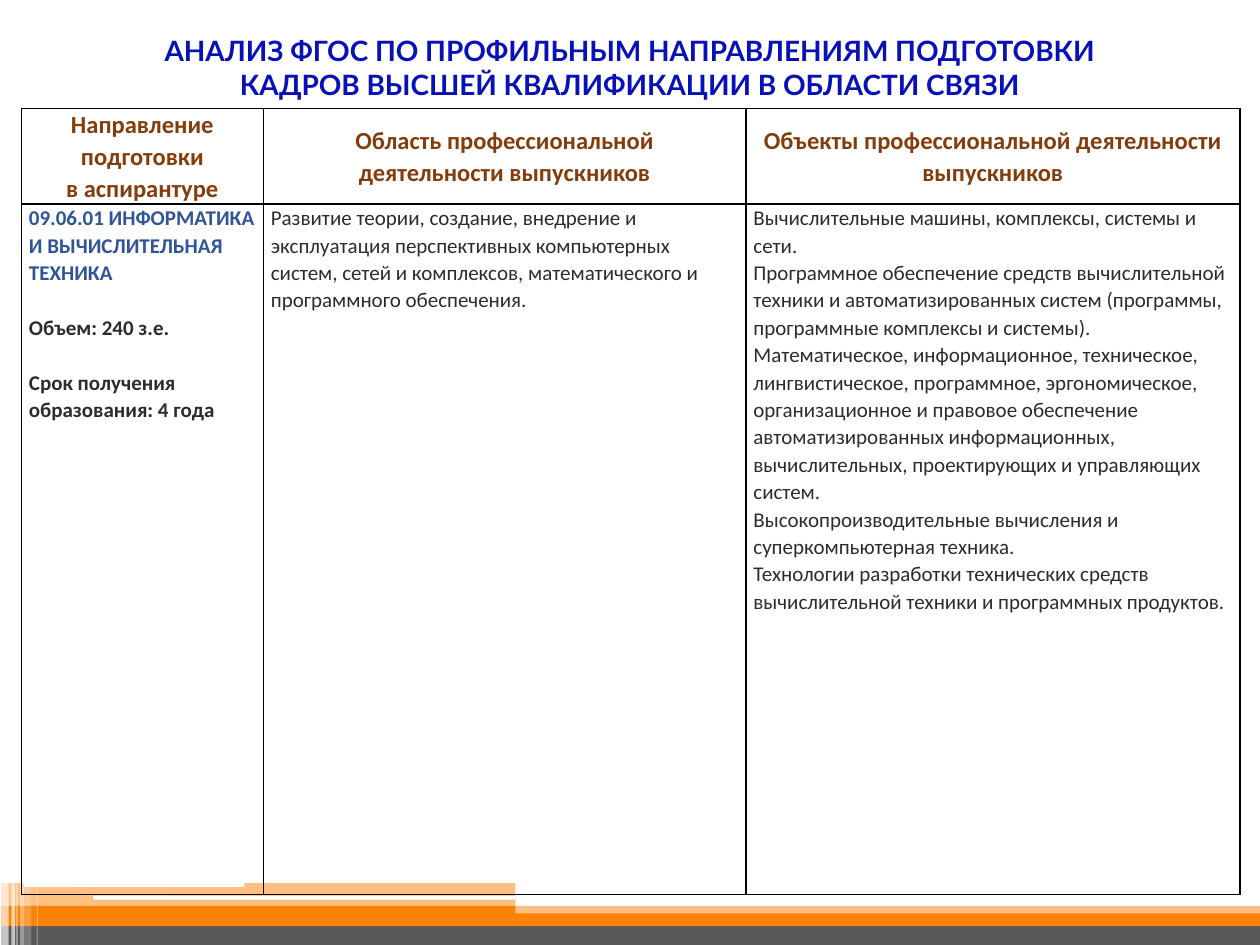
from dataclasses import dataclass

import pptx
import pptx.dml.color
import pptx.enum.shapes
import pptx.enum.text
import pptx.oxml
import pptx.oxml.ns
import pptx.util
from pptx.dml.color import RGBColor
from pptx.util import Inches, Pt

ORANGE = RGBColor(0xFB, 0x82, 0x09)
GRAY = RGBColor(0x58, 0x58, 0x58)
WHITE = RGBColor(0xFF, 0xFF, 0xFF)
BLACK = RGBColor(0, 0, 0)
TITLE_BLUE = RGBColor(0x08, 0x10, 0xB8)
BROWN = RGBColor(0x83, 0x3C, 0x0B)
BLUE = RGBColor(0x2F, 0x55, 0x97)
DARK = RGBColor(0x2C, 0x2C, 0x2C)

CENTER = pptx.enum.text.PP_ALIGN.CENTER
LEFT = pptx.enum.text.PP_ALIGN.LEFT
MIDDLE = pptx.enum.text.MSO_ANCHOR.MIDDLE
TOP = pptx.enum.text.MSO_ANCHOR.TOP


@dataclass
class Bar:
    left: float
    top: float
    width: float
    height: float
    color: RGBColor
    opacity: int = 100
    rounded: bool = False


@dataclass
class Para:
    text: str
    color: RGBColor = DARK
    size: int = 12
    bold: bool = False
    gap: float = 0


BARS = [
    Bar(0.01, 7.19, 10, 0.09, ORANGE, 50),
    Bar(0.01, 7.31, 10, 0.19, GRAY),
    Bar(0.01, 7.25, 10, 0.1, ORANGE),
    Bar(0.01, 7.19, 4.08, 0.1, ORANGE),
    Bar(0.01, 7.01, 4.08, 0.2, ORANGE, 50),
    Bar(0.74, 7.11, 3.35, 0.03, WHITE, rounded=True),
    Bar(0.19, 7, 1.75, 0.04, WHITE, rounded=True),
    # Fading stripes at the left edge
    Bar(0.01, 6.82, 0.06, 0.68, WHITE, 65),
    Bar(0.09, 6.82, 0.03, 0.68, WHITE, 65),
    Bar(0.13, 6.82, 0.01, 0.68, WHITE, 60),
    Bar(0.16, 6.82, 0.03, 0.68, WHITE, 40),
    Bar(0.19, 6.86, 0.06, 0.64, WHITE, 20),
    Bar(0.29, 6.86, 0.01, 0.64, WHITE, 30),
]

TITLE = ("АНАЛИЗ ФГОС ПО ПРОФИЛЬНЫМ НАПРАВЛЕНИЯМ ПОДГОТОВКИ\v"
         "КАДРОВ ВЫСШЕЙ КВАЛИФИКАЦИИ В ОБЛАСТИ СВЯЗИ")
HEADERS = [
    "Направление подготовки\vв аспирантуре",
    "Область профессиональной\vдеятельности выпускников",
    "Объекты профессиональной деятельности выпускников",
]
LINE_GAP = 15.7
BODY = [
    [
        Para("09.06.01 ИНФОРМАТИКА И ВЫЧИСЛИТЕЛЬНАЯ ТЕХНИКА", BLUE, bold=True),
        Para("Объем: 240 з.е.", bold=True, gap=LINE_GAP),
        Para("Срок получения образования: 4 года", bold=True, gap=LINE_GAP),
    ],
    [
        Para("Развитие теории, создание, внедрение и эксплуатация перспективных "
             "компьютерных систем, сетей и комплексов, математического и "
             "программного обеспечения."),
    ],
    [
        Para("Вычислительные машины, комплексы, системы и сети."),
        Para("Программное обеспечение средств вычислительной техники и "
             "автоматизированных систем (программы, программные комплексы и "
             "системы)."),
        Para("Математическое, информационное, техническое, лингвистическое, "
             "программное, эргономическое, организационное и правовое обеспечение "
             "автоматизированных информационных, вычислительных, проектирующих и "
             "управляющих систем."),
        Para("Высокопроизводительные вычисления и суперкомпьютерная техника."),
        Para("Технологии разработки технических средств вычислительной техники и "
             "программных продуктов."),
    ],
]
COL_WIDTHS = [1.92, 3.83, 3.92]
ROW_HEIGHTS = [0.75, 5.48]


def draw_bar(slide, bar: Bar) -> None:
    kinds = pptx.enum.shapes.MSO_SHAPE
    kind = kinds.ROUNDED_RECTANGLE if bar.rounded else kinds.RECTANGLE
    sp = slide.shapes.add_shape(kind, Inches(bar.left), Inches(bar.top),
                                Inches(bar.width), Inches(bar.height))
    sp.shadow.inherit = False
    sp.line.fill.background()
    sp.fill.solid()
    sp.fill.fore_color.rgb = bar.color
    if bar.opacity < 100:
        clr = sp.fill._xPr.find(".//" + pptx.oxml.ns.qn("a:srgbClr"))
        alpha = pptx.oxml.parse_xml(
            f'<a:alpha {pptx.oxml.ns.nsdecls("a")} val="{bar.opacity * 1000}"/>')
        clr.append(alpha)


def format_runs(p, font: str, size: int, color: RGBColor, bold: bool) -> None:
    for r in p.runs:
        r.font.name = font
        r.font.size = Pt(size)
        r.font.bold = bold
        r.font.color.rgb = color


def set_borders(cell) -> None:
    tc_pr = cell._tc.get_or_add_tcPr()
    for i, side in enumerate(("lnL", "lnR", "lnT", "lnB")):
        tc_pr.insert(i, pptx.oxml.parse_xml(
            f'<a:{side} {pptx.oxml.ns.nsdecls("a")} w="{Pt(1)}"><a:solidFill>'
            f'<a:srgbClr val="{BLACK}"/></a:solidFill></a:{side}>'))


def fill_cell(cell, paras: list[Para], align, anchor) -> None:
    cell.fill.background()
    set_borders(cell)
    cell.margin_left = cell.margin_right = Inches(0.06)
    cell.margin_top = cell.margin_bottom = 0
    cell.vertical_anchor = anchor
    tf = cell.text_frame
    for i, para in enumerate(paras):
        p = tf.add_paragraph() if i else tf.paragraphs[0]
        p.text = para.text
        p.alignment = align
        p.line_spacing = 1.07
        if para.gap:
            p.space_before = Pt(para.gap)
        format_runs(p, "Calibri", para.size, para.color, para.bold)


def draw_title(slide) -> None:
    title = slide.shapes.title
    title.left, title.top = Inches(0), Inches(0.21)
    title.width, title.height = Inches(10), Inches(0.65)
    tf = title.text_frame
    tf.text = TITLE
    tf.word_wrap = True
    tf.vertical_anchor = MIDDLE
    p = tf.paragraphs[0]
    p.alignment = CENTER
    format_runs(p, "Lato", 16, TITLE_BLUE, True)


def draw_table(slide) -> None:
    frame = slide.shapes.add_table(
        len(ROW_HEIGHTS), len(COL_WIDTHS), Inches(0.17), Inches(0.86),
        Inches(sum(COL_WIDTHS)), Inches(sum(ROW_HEIGHTS)))
    table = frame.table
    table.first_row = table.horz_banding = False
    for row, height in zip(table.rows, ROW_HEIGHTS):
        row.height = Inches(height)
    for i, width in enumerate(COL_WIDTHS):
        table.columns[i].width = Inches(width)
        header = Para(HEADERS[i], BROWN, 14, True)
        fill_cell(table.cell(0, i), [header], CENTER, MIDDLE)
        fill_cell(table.cell(1, i), BODY[i], LEFT, TOP)


def main() -> None:
    prs = pptx.Presentation()
    prs.slide_width, prs.slide_height = Inches(10), Inches(7.5)
    s = prs.slides.add_slide(prs.slide_layouts[5])
    # Footer decoration
    for bar in BARS:
        draw_bar(s, bar)
    # Title and table
    draw_title(s)
    draw_table(s)
    prs.save("out.pptx")


if __name__ == "__main__":
    main()
